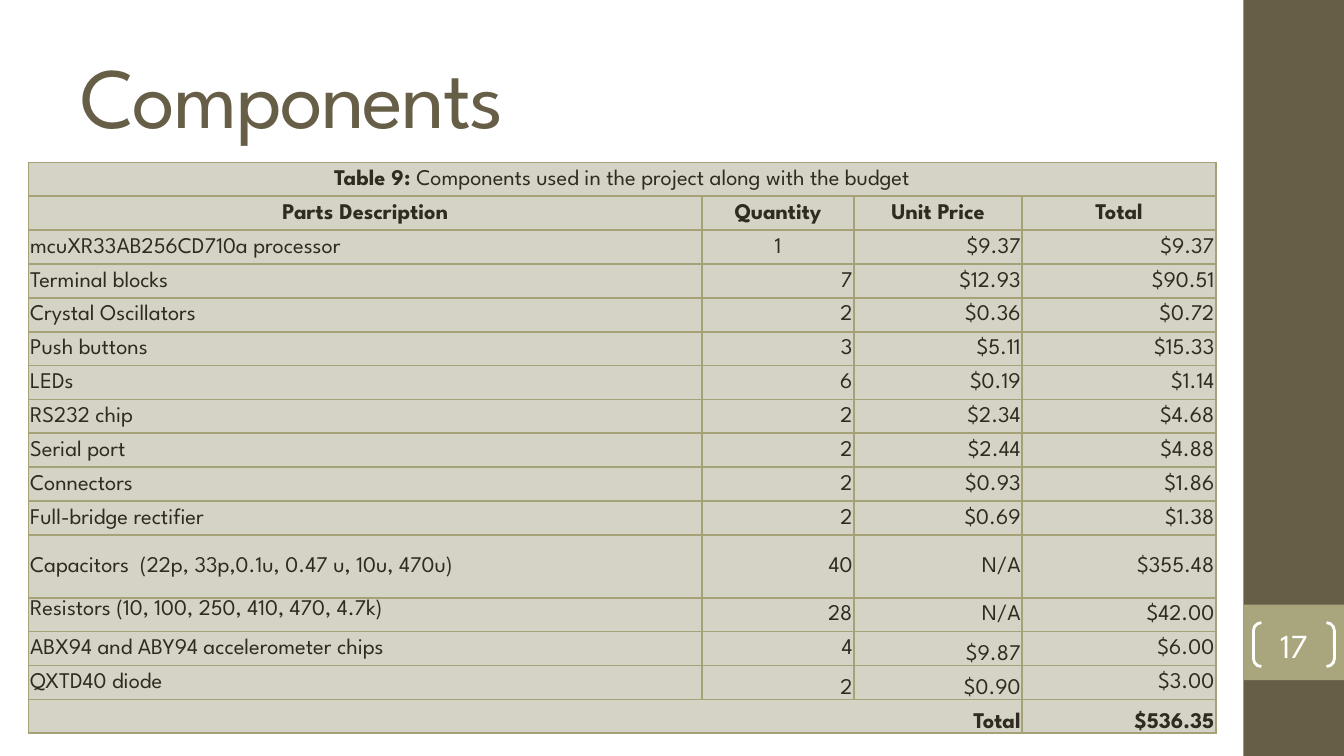
from dataclasses import dataclass

from lxml.etree import SubElement
from pptx import Presentation
from pptx.dml.color import RGBColor
from pptx.enum.shapes import MSO_SHAPE as ShapeKind
from pptx.enum.text import MSO_ANCHOR as Anchor, PP_ALIGN as Align
from pptx.oxml.ns import qn
from pptx.slide import Slide
from pptx.table import _Cell as Cell
from pptx.text.text import _Paragraph as Paragraph
from pptx.util import Cm, Pt


@dataclass(frozen=True)
class Theme:
    font: str = "League Spartan"
    brown: str = "675E47"
    olive: str = "A9A57C"
    white: str = "FFFFFF"
    ink: str = "2F2B20"
    cell: str = "D5D3C5"
    border: str = "A6A278"
    title_size: float = 46
    number_size: float = 18
    table_size: float = 12


@dataclass(frozen=True)
class Box:
    left: float
    top: float
    width: float
    height: float

    def lengths(self) -> tuple:
        return Cm(self.left), Cm(self.top), Cm(self.width), Cm(self.height)


@dataclass(frozen=True)
class Part:
    description: str
    quantity: str
    price: str
    total: str
    anchors: tuple = (Anchor.MIDDLE,) * 4
    quantity_align: Align = Align.RIGHT
    height: float = 0.64

    def texts(self) -> tuple:
        return self.description, self.quantity, self.price, self.total

    def alignments(self) -> tuple:
        return Align.LEFT, self.quantity_align, Align.RIGHT, Align.RIGHT


THEME = Theme()
MIDDLE, BOTTOM = Anchor.MIDDLE, Anchor.BOTTOM
HEADERS = ("Parts Description", "Quantity", "Unit Price", "Total")
COLUMN_WIDTHS = (12.73, 2.87, 3.18, 3.66)
ROW_HEIGHT = 0.64
PARTS = (
    Part("mcuXR33AB256CD710a processor", "1", "$9.37", "$9.37", quantity_align=Align.CENTER),
    Part("Terminal blocks", "7", "$12.93", "$90.51"),
    Part("Crystal Oscillators", "2", "$0.36", "$0.72"),
    Part("Push buttons", "3", "$5.11", "$15.33"),
    Part("LEDs", "6", "$0.19", "$1.14"),
    Part("RS232 chip", "2", "$2.34", "$4.68"),
    Part("Serial port", "2", "$2.44", "$4.88"),
    Part("Connectors", "2", "$0.93", "$1.86"),
    Part("Full-bridge rectifier", "2", "$0.69", "$1.38"),
    Part("Capacitors  (22p, 33p,0.1u, 0.47 u, 10u, 470u)", "40", "N/A", "$355.48", height=1.19),
    Part("Resistors (10, 100, 250, 410, 470, 4.7k)", "28", "N/A", "$42.00",
         (Anchor.TOP, MIDDLE, MIDDLE, MIDDLE)),
    Part("ABX94 and ABY94 accelerometer chips", "4", "$9.87", "$6.00",
         (MIDDLE, MIDDLE, BOTTOM, MIDDLE)),
    Part("QXTD40 diode", "2", "$0.90", "$3.00", (MIDDLE, BOTTOM, BOTTOM, MIDDLE)),
)


def style_paragraph(paragraph: Paragraph, size: float, color: str,
                    align: Align = Align.LEFT) -> None:
    paragraph.alignment = align
    paragraph.font.name = THEME.font
    paragraph.font.size = Pt(size)
    paragraph.font.color.rgb = RGBColor.from_string(color)


def add_panel(slide: Slide, box: Box, color: str) -> None:
    panel = slide.shapes.add_shape(ShapeKind.RECTANGLE, *box.lengths())
    panel.shadow.inherit = False
    panel.fill.solid()
    panel.fill.fore_color.rgb = RGBColor.from_string(color)
    panel.line.fill.background()


def add_title(slide: Slide, box: Box, text: str) -> None:
    frame = slide.shapes.add_textbox(*box.lengths()).text_frame
    frame.word_wrap = True
    frame.vertical_anchor = MIDDLE
    paragraph = frame.paragraphs[0]
    run = paragraph.add_run()
    run.text = text
    run.font._element.set("spc", "-100")
    style_paragraph(paragraph, THEME.title_size, THEME.brown)


def add_page_number(slide: Slide, box: Box, text: str) -> None:
    bracket = slide.shapes.add_shape(ShapeKind.DOUBLE_BRACKET, *box.lengths())
    bracket.adjustments[0] = 0.18
    bracket.shadow.inherit = False
    bracket.fill.background()
    bracket.line.color.rgb = RGBColor.from_string(THEME.white)
    bracket.line.width = Pt(1.5)
    frame = bracket.text_frame
    frame.margin_left = frame.margin_right = frame.margin_top = frame.margin_bottom = 0
    frame.vertical_anchor = MIDDLE
    frame.text = text
    style_paragraph(frame.paragraphs[0], THEME.number_size, THEME.white, Align.CENTER)


def style_cell(cell: Cell) -> None:
    cell.margin_left = cell.margin_right = cell.margin_top = Cm(0.03)
    cell.margin_bottom = 0
    cell.fill.solid()
    cell.fill.fore_color.rgb = RGBColor.from_string(THEME.cell)
    properties = cell._tc.get_or_add_tcPr()
    for position, side in enumerate(("a:lnL", "a:lnR", "a:lnT", "a:lnB")):
        line = SubElement(properties, qn(side), w=str(Pt(1)))
        fill = SubElement(line, qn("a:solidFill"))
        SubElement(fill, qn("a:srgbClr"), val=THEME.border)
        properties.insert(position, line)
    style_paragraph(cell.text_frame.paragraphs[0], THEME.table_size, THEME.ink)


def write_cell(cell: Cell, text: str, align: Align, anchor: Anchor = MIDDLE,
               bold: bool = False) -> None:
    paragraph = cell.text_frame.paragraphs[0]
    paragraph.add_run().text = text
    paragraph.alignment = align
    paragraph.font.bold = bold
    cell.vertical_anchor = anchor


def add_budget_table(slide: Slide, left: float, top: float) -> None:
    heights = (ROW_HEIGHT, ROW_HEIGHT, *(part.height for part in PARTS), ROW_HEIGHT)
    box = Box(left, top, sum(COLUMN_WIDTHS), sum(heights))
    table = slide.shapes.add_table(len(heights), len(COLUMN_WIDTHS), *box.lengths()).table
    table.first_row = table.horz_banding = False
    for column, width in zip(table.columns, COLUMN_WIDTHS):
        column.width = Cm(width)
    for row, height in zip(table.rows, heights):
        row.height = Cm(height)
    for cell in table.iter_cells():
        style_cell(cell)

    caption = table.cell(0, 0)
    caption.merge(table.cell(0, 3))
    write_cell(caption, "Table 9: ", Align.CENTER)
    paragraph = caption.text_frame.paragraphs[0]
    paragraph.runs[0].font.bold = True
    paragraph.add_run().text = "Components used in the project along with the budget"

    for column, header in enumerate(HEADERS):
        write_cell(table.cell(1, column), header, Align.CENTER, bold=True)
    for row, part in enumerate(PARTS, start=2):
        entries = zip(part.texts(), part.alignments(), part.anchors)
        for column, (text, align, anchor) in enumerate(entries):
            write_cell(table.cell(row, column), text, align, anchor)

    last = len(heights) - 1
    table.cell(last, 0).merge(table.cell(last, 2))
    for column, text in ((0, "Total"), (3, "$536.35")):
        write_cell(table.cell(last, column), text, Align.RIGHT, BOTTOM, bold=True)


def main() -> None:
    presentation = Presentation()
    presentation.slide_width, presentation.slide_height = Cm(25.4), Cm(14.29)
    slide = presentation.slides.add_slide(presentation.slide_layouts[6])
    add_panel(slide, Box(23.5, 0, 1.9, 14.29), THEME.brown)
    add_panel(slide, Box(23.5, 11.43, 1.9, 1.43), THEME.olive)
    add_title(slide, Box(1.27, 0.59, 21.17, 2.39), "Components")
    add_page_number(slide, Box(23.69, 11.77, 1.53, 0.83), "17")
    add_budget_table(slide, 0.54, 3.07)
    presentation.save("out.pptx")


if __name__ == "__main__":
    main()
